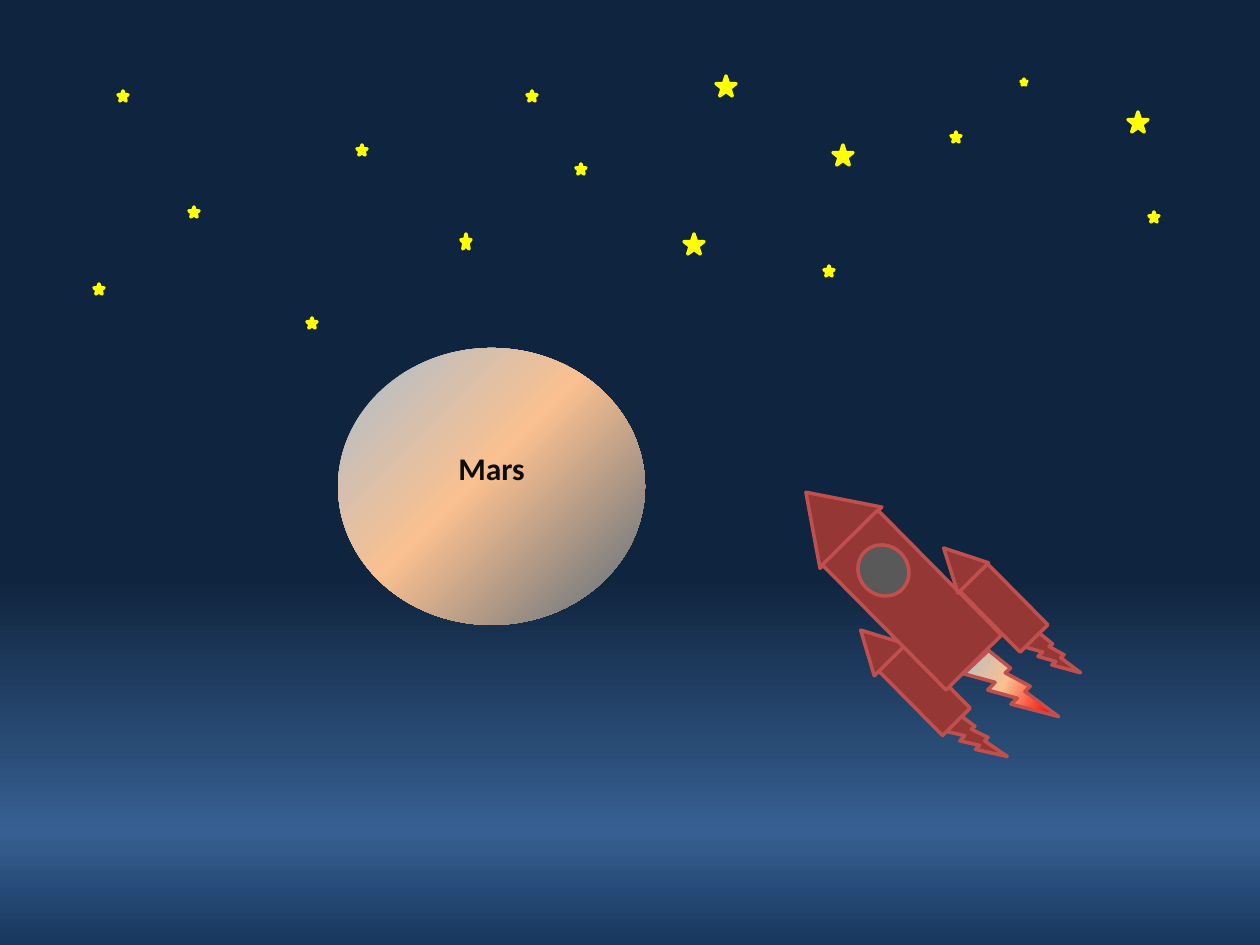
from copy import deepcopy

from pptx import Presentation
from pptx.dml.color import RGBColor
from pptx.enum.shapes import MSO_SHAPE
from pptx.enum.text import MSO_ANCHOR, PP_ALIGN
from pptx.oxml.ns import qn
from pptx.util import Emu, Pt

PX = 914400 / 126
BLANK_LAYOUT = 6
OVAL, RECTANGLE = MSO_SHAPE.OVAL, MSO_SHAPE.RECTANGLE
TRIANGLE, BOLT = MSO_SHAPE.ISOSCELES_TRIANGLE, MSO_SHAPE.LIGHTNING_BOLT
STAR = MSO_SHAPE.STAR_5_POINT
MIDDLE, CENTER = MSO_ANCHOR.MIDDLE, PP_ALIGN.CENTER

SKY = [(0, "0F243E"), (34, "0F243E"), (61, "0F243E"), (88, "376092"), (100, "17375E")]
PLANET = [(13, "BFBFBF"), (46, "FAC090"), (87, "808080")]
FIRE = [(13, "BFBFBF"), (46, "FAC090"), (87, "FF0000")]
HULL, TRIM, GLASS, YELLOW = "953735", "C0504D", "595959", "FFFF00"

MARS_BOX = (338, 348, 307, 277)
TILT = 315.3

# Shape, box (left, top, width, height), rotation, fill; back to front
ROCKET = [
    (BOLT, (948, 712, 52, 54), 341.5, HULL),
    (RECTANGLE, (905, 644, 39, 91), TILT, HULL),
    (TRIANGLE, (853, 624, 45, 42), TILT, HULL),
    (TRIANGLE, (785, 483, 87, 64), TILT, HULL),
    (BOLT, (1027, 631, 48, 49), 344.7, HULL),
    (BOLT, (970, 646, 78, 84), 342.8, FIRE),
    (RECTANGLE, (873, 512, 78, 176), TILT, HULL),
    (RECTANGLE, (984, 564, 39, 87), TILT, HULL),
    (TRIANGLE, (937, 542, 43, 42), TILT, HULL),
    (OVAL, (859, 544, 49, 53), TILT, GLASS),
]

# Star size (width, height) and the left, top of each star of that size
STARS = [
    ((10, 10), [(94, 284), (189, 207), (357, 145), (307, 318), (951, 132), (118, 91),
                (576, 164), (824, 266), (527, 91), (1149, 212)]),
    ((10, 15), [(461, 234)]),
    ((6, 6), [(1021, 79)]),
    ((20, 20), [(833, 145), (716, 76), (1128, 112), (684, 234)]),
]


def px(value):
    return Emu(round(value * PX))


def color(hex_value):
    return RGBColor.from_string(hex_value)


def fill_gradient(fill, element, stops, angle):
    """Fill with any number of stops; the angle runs clockwise."""
    fill.gradient()
    fill.gradient_angle = 360 - angle
    stop_list = next(element.iter(qn("a:gsLst")))
    while len(stop_list) < len(stops):
        stop_list.append(deepcopy(stop_list[0]))
    for stop, (position, hex_value) in zip(fill.gradient_stops, stops):
        stop.position = position / 100
        stop.color.rgb = color(hex_value)


def add_shape(shapes, kind, box, fill, line=None, rotation=0):
    shape = shapes.add_shape(kind, *map(px, box))
    shape.shadow.inherit = False
    shape.rotation = rotation
    if isinstance(fill, str):
        shape.fill.solid()
        shape.fill.fore_color.rgb = color(fill)
    else:
        fill_gradient(shape.fill, shape._element, fill, 45)
    if line:
        shape.line.color.rgb = color(line)
        shape.line.width = Pt(2)
    else:
        shape.line.fill.background()
    return shape


def add_mars(slide):
    mars = add_shape(slide.shapes, OVAL, MARS_BOX, PLANET)
    frame = mars.text_frame
    frame.vertical_anchor = MIDDLE
    frame.margin_top, frame.margin_bottom = px(6), px(44)
    paragraph = frame.paragraphs[0]
    paragraph.text = "Mars"
    paragraph.alignment = CENTER
    paragraph.font.name = "Calibri"
    paragraph.font.size = Pt(18)
    paragraph.font.bold = True
    paragraph.font.color.rgb = color("0D0D0D")


def main():
    presentation = Presentation()
    presentation.slide_width, presentation.slide_height = px(1260), px(945)
    slide = presentation.slides.add_slide(presentation.slide_layouts[BLANK_LAYOUT])
    fill_gradient(slide.background.fill, slide._element, SKY, 90)

    add_mars(slide)
    rocket = slide.shapes.add_group_shape()
    for kind, box, rotation, fill in ROCKET:
        add_shape(rocket.shapes, kind, box, fill, TRIM, rotation)
    stars = slide.shapes.add_group_shape()
    for size, corners in STARS:
        for corner in corners:
            add_shape(stars.shapes, STAR, corner + size, YELLOW, YELLOW)

    presentation.save("out.pptx")


if __name__ == "__main__":
    main()
